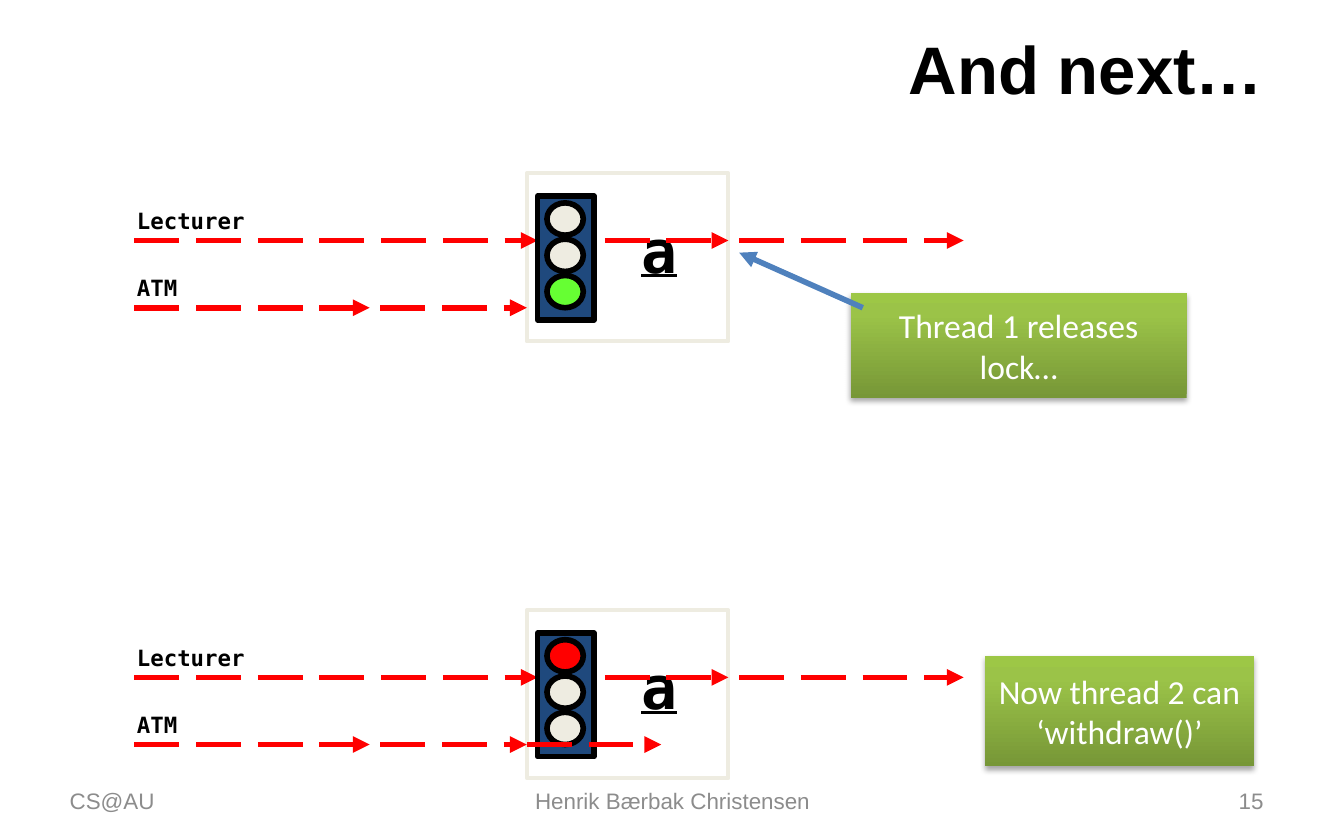
from pptx import Presentation
from pptx.dml.color import RGBColor
from pptx.enum.dml import MSO_LINE
from pptx.enum.shapes import MSO_CONNECTOR, MSO_SHAPE
from pptx.enum.text import MSO_ANCHOR, MSO_AUTO_SIZE, PP_ALIGN
from pptx.oxml import parse_xml
from pptx.oxml.ns import nsdecls
from pptx.util import Inches, Pt

BLACK = RGBColor(0x00, 0x00, 0x00)
WHITE = RGBColor(0xFF, 0xFF, 0xFF)
GRAY = RGBColor(0x8C, 0x8C, 0x8C)
CREAM = RGBColor(0xEE, 0xEC, 0xE1)
NAVY = RGBColor(0x1F, 0x49, 0x7D)
BLUE = RGBColor(0x4F, 0x81, 0xBD)
RED = RGBColor(0xFF, 0x00, 0x00)
GREEN = RGBColor(0x66, 0xFF, 0x33)
GRADIENT = [(0, RGBColor(0x77, 0x97, 0x37)), (80, RGBColor(0x9B, 0xC3, 0x48)),
            (100, RGBColor(0x9D, 0xC7, 0x46))]

TITLE = "And next…"
FOOTERS = [
    ("CS@AU", 0.42, 2.33, PP_ALIGN.LEFT),
    ("Henrik Bærbak Christensen", 3.42, 3.17, PP_ALIGN.CENTER),
    ("15", 7.17, 2.33, PP_ALIGN.RIGHT),
]
SCENES = [
    {"top": 1.29, "lights": [CREAM, CREAM, GREEN], "extra": []},
    {"top": 4.54, "lights": [RED, CREAM, CREAM], "extra": [(3.92, 4.92)]},
]
THREADS = [("Lecturer", 0.5, 1.02, 4), ("ATM", 1, 0.51, 2.75)]
CALLOUTS = [
    ("Thread 1 releases lock…", (6.33, 2.18, 2.5, 0.78)),
    ("Now thread 2 can ‘withdraw()’", (7.33, 4.88, 2, 0.82)),
]
TITLE_FONT = {"name": "Arial", "size": Pt(36), "bold": True}
FOOTER_FONT = {"name": "Arial", "size": Pt(12)}
LABEL_FONT = {"name": "DejaVu Sans Mono", "size": Pt(12), "bold": True}
OBJECT_FONT = {"name": "DejaVu Sans Mono", "size": Pt(32), "bold": True, "underline": True}
CALLOUT_FONT = {"name": "Calibri", "size": Pt(18)}


def write(sp, text, font, color, align=PP_ALIGN.LEFT, anchor=MSO_ANCHOR.MIDDLE, wrap=True):
    tf = sp.text_frame
    tf.word_wrap = wrap
    tf.vertical_anchor = anchor
    p = tf.paragraphs[0]
    p.alignment = align
    r = p.add_run()
    r.text = text
    for key, value in font.items():
        setattr(r.font, key, value)
    r.font.color.rgb = color


def add_text(s, box, *args, **kwargs):
    sp = s.shapes.add_textbox(*map(Inches, box))
    write(sp, *args, **kwargs)
    if not sp.text_frame.word_wrap:
        sp.text_frame.auto_size = MSO_AUTO_SIZE.SHAPE_TO_FIT_TEXT


def add_box(s, kind, box, fill, line, width=3):
    sp = s.shapes.add_shape(kind, *map(Inches, box))
    sp.shadow.inherit = False
    sp.fill.solid()
    sp.fill.fore_color.rgb = fill
    sp.line.color.rgb = line
    sp.line.width = Pt(width)


def add_arrow(s, x1, y1, x2, y2, color=RED, dash=MSO_LINE.LONG_DASH):
    c = s.shapes.add_connector(MSO_CONNECTOR.STRAIGHT, *map(Inches, (x1, y1, x2, y2)))
    c.line.color.rgb = color
    c.line.width = Pt(3)
    if dash:
        c.line.dash_style = dash
    c.line._get_or_add_ln().append(parse_xml(f'<a:tailEnd {nsdecls("a")} type="triangle"/>'))
    c._element.spPr.append(parse_xml(f'<a:effectLst {nsdecls("a")}/>'))


def add_scene(s, top, lights, extra):
    add_box(s, MSO_SHAPE.RECTANGLE, (3.92, top, 1.5, 1.25), WHITE, CREAM, 2.25)
    for name, offset, width, end in THREADS:
        y = top + offset
        add_arrow(s, 1, y, end, y)
        add_text(s, (0.92, y - 0.3, width, 0.3), name, LABEL_FONT, BLACK,
                 anchor=MSO_ANCHOR.TOP, wrap=False)
    add_text(s, (4.67, top + 0.25, 0.47, 0.63), "a", OBJECT_FONT, BLACK,
             PP_ALIGN.CENTER, wrap=False)
    add_box(s, MSO_SHAPE.RECTANGLE, (4, top + 0.17, 0.42, 0.92), NAVY, BLACK)
    for i, color in enumerate(lights):
        add_box(s, MSO_SHAPE.OVAL, (4.07, top + 0.22 + 0.27 * i, 0.27, 0.24), color, BLACK)
    upper, lower = (top + offset for _, offset, _, _ in THREADS)
    for x1, x2, y in [(4.5, 5.42, upper), (2.83, 3.92, lower), (5.5, 7.17, upper)]:
        add_arrow(s, x1, y, x2, y)
    for x1, x2 in extra:
        add_arrow(s, x1, lower, x2, lower)


def add_callout(s, text, box):
    sp = s.shapes.add_shape(MSO_SHAPE.RECTANGLE, *map(Inches, box))
    stops = "".join(f'<a:gs pos="{pos * 1000}"><a:srgbClr val="{color}"/></a:gs>'
                    for pos, color in GRADIENT)
    spPr = sp._element.spPr
    spPr.append(parse_xml(f'<a:gradFill {nsdecls("a")} rotWithShape="1"><a:gsLst>{stops}</a:gsLst>'
                          '<a:lin ang="16200000" scaled="0"/></a:gradFill>'))
    sp.line.fill.background()
    spPr.append(parse_xml(
        f'<a:effectLst {nsdecls("a")}><a:outerShdw blurRad="{Pt(3.1)}" dist="{Pt(1.8)}" '
        'dir="5400000" rotWithShape="0"><a:srgbClr val="000000"><a:alpha val="35000"/>'
        '</a:srgbClr></a:outerShdw></a:effectLst>'))
    write(sp, text, CALLOUT_FONT, WHITE, PP_ALIGN.CENTER)


def main():
    prs = Presentation()
    prs.slide_width, prs.slide_height = Inches(10), Inches(6.25)
    s = prs.slides.add_slide(prs.slide_layouts[5])
    title = s.shapes.title
    title.left, title.top, title.width, title.height = map(Inches, (0.5, 0.18, 9, 0.65))
    write(title, TITLE, TITLE_FONT, BLACK, PP_ALIGN.RIGHT)
    for text, left, width, align in FOOTERS:
        add_text(s, (left, 5.79, width, 0.33), text, FOOTER_FONT, GRAY, align)
    for scene in SCENES:
        add_scene(s, **scene)
    for text, box in CALLOUTS:
        add_callout(s, text, box)
    add_arrow(s, 6.42, 2.29, 5.5, 1.88, BLUE, None)
    prs.save("out.pptx")


if __name__ == "__main__":
    main()
